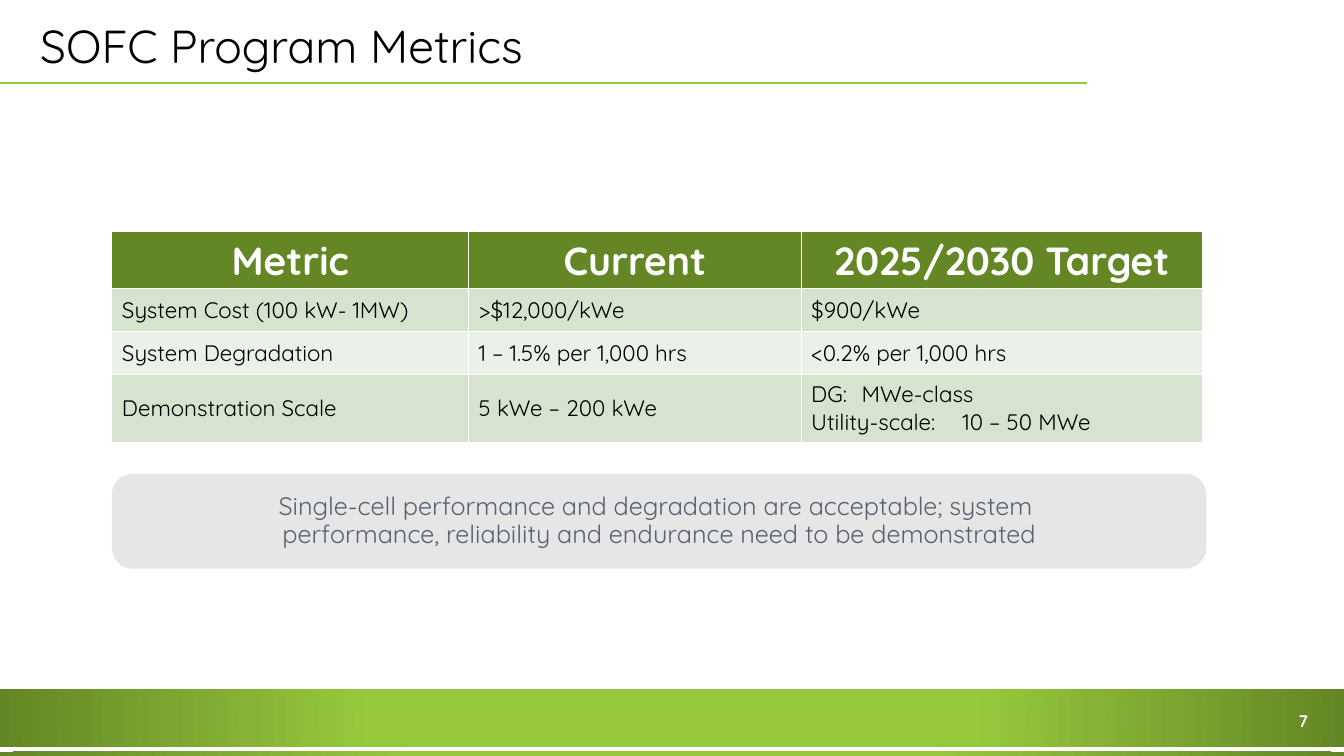
from lxml import etree
from pptx import Presentation
from pptx.dml.color import RGBColor
from pptx.enum.shapes import MSO_CONNECTOR, MSO_SHAPE
from pptx.enum.text import MSO_ANCHOR, PP_ALIGN
from pptx.oxml import parse_xml
from pptx.oxml.ns import qn
from pptx.util import Cm, Pt

LEFT, MID, RIGHT = PP_ALIGN.LEFT, PP_ALIGN.CENTER, PP_ALIGN.RIGHT
CENTRE = MSO_ANCHOR.MIDDLE
RECT, ROUND = MSO_SHAPE.RECTANGLE, MSO_SHAPE.ROUNDED_RECTANGLE
STRAIGHT = MSO_CONNECTOR.STRAIGHT
FACE = "Quicksand"
WIDTH, HEIGHT = 33.87, 19.05
HUES = {"lime": "98C93D", "moss": "648725", "black": "000000",
        "white": "FFFFFF", "mint": "D5E3CF", "pale": "EBF1E9",
        "grey": "E7E6E6", "slate": "556270"}
HEAD = {"size": Pt(28), "bold": True}
CELL = {"size": Pt(16), "bold": False}
ROWS = [["Metric", "Current", "2025/2030 Target"],
        ["System Cost (100 kW- 1MW)", ">$12,000/kWe", "$900/kWe"],
        ["System Degradation", "1 – 1.5% per 1,000 hrs", "<0.2% per 1,000 hrs"],
        ["Demonstration Scale", "5 kWe – 200 kWe",
         "DG:\tMWe-class\nUtility-scale:\t10 – 50 MWe"]]
COLS = [8.99, 8.38, 10.11]
TALL = [1.27, 1.09, 1.09, 1.7]
NOTE = ("Single-cell performance and degradation are acceptable; system \v"
        "performance, reliability and endurance need to be demonstrated")


def hue(name):
    """Return the named colour."""
    return RGBColor.from_string(HUES[name])


def write(frame, text, look, tint, align=LEFT, para=None):
    """Fill a text frame with text in one format."""
    frame.text = text
    frame.word_wrap = True
    frame.vertical_anchor = CENTRE
    for item in frame.paragraphs:
        item.alignment = align
        for key, value in (para or {}).items():
            setattr(item, key, value)
        for run in item.runs:
            run.font.name = FACE
            run.font.color.rgb = hue(tint)
            for key, value in look.items():
                setattr(run.font, key, value)


def add_title(slide, left, top, wide, high):
    """Place the title and the rule under it."""
    title = slide.shapes.title
    title.left, title.top = Cm(left), Cm(top)
    title.width, title.height = Cm(wide), Cm(high)
    write(title.text_frame, "SOFC Program Metrics", {"size": Pt(33)}, "black",
          para={"line_spacing": 0.9})
    base = Cm(top + high + 0.03)
    rule = slide.shapes.add_connector(STRAIGHT, 0, base, Cm(left + wide), base)
    rule.line.color.rgb = hue("lime")
    rule.line.width = Pt(1.75)
    etree.SubElement(rule.element.spPr, qn("a:effectLst"))


def add_glow(slide, top, high, start):
    """Draw a full-width bar that darkens towards its ends."""
    bar = slide.shapes.add_shape(RECT, 0, Cm(top), Cm(WIDTH), Cm(high))
    bar.shadow.inherit = False
    bar.line.fill.background()
    bar.fill.gradient()
    stops = zip(bar.fill.gradient_stops, [("lime", start), ("moss", 1)])
    for stop, (name, place) in stops:
        stop.color.rgb = hue(name)
        stop.position = place
    lin = bar.element.spPr.find(".//" + qn("a:lin"))
    lin.getparent().replace(lin, parse_xml(
        '<a:path xmlns:a="http://schemas.openxmlformats.org/drawingml/2006/main"'
        ' path="circle"><a:fillToRect l="50000" t="50000" r="50000" b="50000"/>'
        '</a:path>'))


def add_foot(slide, top, high):
    """Draw the footer bars and the page number."""
    add_glow(slide, top, high, 0.44)
    add_glow(slide, HEIGHT - 0.1, 0.1, 0.37)
    page = slide.shapes.add_textbox(Cm(WIDTH - 1.74), Cm(top + 0.28),
                                    Cm(1.09), Cm(1.02))
    write(page.text_frame, "7", {"size": Pt(12), "bold": True}, "white", RIGHT)


def add_grid(slide, left, top):
    """Place the table of metrics."""
    grid = slide.shapes.add_table(len(ROWS), len(COLS), Cm(left), Cm(top),
                                  Cm(sum(COLS)), Cm(sum(TALL))).table
    for col, wide in zip(grid.columns, COLS):
        col.width = Cm(wide)
    for i, texts in enumerate(ROWS):
        grid.rows[i].height = Cm(TALL[i])
        fill = ("mint" if i % 2 else "pale") if i else "moss"
        look, tint, align = (CELL, "black", LEFT) if i else (HEAD, "white", MID)
        for j, text in enumerate(texts):
            cell = grid.cell(i, j)
            cell.fill.solid()
            cell.fill.fore_color.rgb = hue(fill)
            cell.vertical_anchor = CENTRE
            write(cell.text_frame, text, look, tint, align)


def add_note(slide, left, top, wide, high):
    """Place the rounded box with the closing remark."""
    box = slide.shapes.add_shape(ROUND, Cm(left), Cm(top), Cm(wide), Cm(high))
    box.adjustments[0] = 0.22
    box.shadow.inherit = False
    box.line.fill.background()
    box.fill.solid()
    box.fill.fore_color.rgb = hue("grey")
    write(box.text_frame, NOTE, {"size": Pt(18)}, "slate", MID,
          {"line_spacing": 0.9, "space_after": Pt(3)})


def main():
    """Build and save the slide."""
    deck = Presentation()
    deck.slide_width, deck.slide_height = Cm(WIDTH), Cm(HEIGHT)
    slide = deck.slides.add_slide(deck.slide_layouts[5])
    add_foot(slide, 17.37, 1.45)
    add_title(slide, 0.76, 0.38, 26.64, 1.68)
    add_grid(slide, 2.82, 5.82)
    add_note(slide, 2.82, 11.94, 27.58, 2.39)
    deck.save("out.pptx")


if __name__ == "__main__":
    main()
